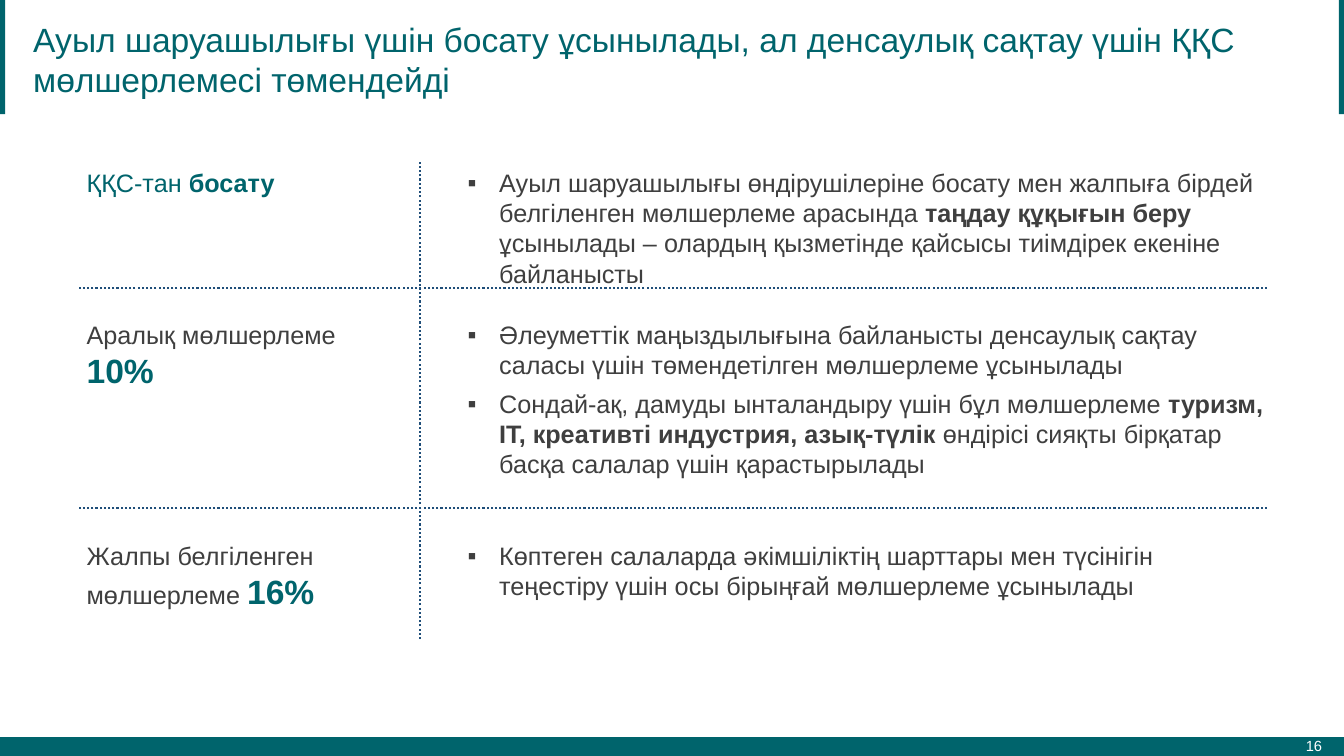
"""Build the slide on proposed VAT exemptions and rates."""
import pptx
import pptx.util
import pptx.dml.color
import pptx.enum.dml
import pptx.enum.shapes
import pptx.enum.text
import pptx.oxml.ns
import lxml.etree

Pt = pptx.util.Pt
qn = pptx.oxml.ns.qn
align = pptx.enum.text.PP_ALIGN
hues = {"teal": "00646C", "gray": "3F3F3F", "navy": "1F4E79", "white": "FFFFFF"}
rgb = {name: pptx.dml.color.RGBColor.from_string(code) for name, code in hues.items()}

deck = pptx.Presentation()
deck.slide_width, deck.slide_height = Pt(960), Pt(540)
slide = deck.slides.add_slide(deck.slide_layouts[6])


def write(paras, box, size=18, hue="gray", side=align.LEFT, mid=False, bullet=False):
    """Add a text box; each paragraph is a list of (text, format) runs."""
    frame = slide.shapes.add_textbox(*map(Pt, box)).text_frame
    frame.word_wrap = True
    if mid:
        frame.vertical_anchor = pptx.enum.text.MSO_ANCHOR.MIDDLE
    for i, runs in enumerate(paras):
        para = frame.add_paragraph() if i else frame.paragraphs[0]
        para.alignment = side
        if bullet:
            para.space_after = Pt(6)
            props = para._p.get_or_add_pPr()
            props.set("marL", str(Pt(22.5)))
            props.set("indent", str(-Pt(22.5)))
            lxml.etree.SubElement(props, qn("a:buFont"), typeface="Arial")
            lxml.etree.SubElement(props, qn("a:buChar"), char="▪")
        for words, form in runs:
            run = para.add_run()
            run.text = words
            font = run.font
            font.name = "Arial"
            font.size = Pt(form.get("size", size))
            font.bold = form.get("bold", False)
            font.color.rgb = rgb[form.get("hue", hue)]


for box in [(0, 526.5, 960, 13.5), (0, -1.5, 3.6, 83), (956.4, -1.5, 3.6, 83)]:
    bar = slide.shapes.add_shape(pptx.enum.shapes.MSO_SHAPE.RECTANGLE, *map(Pt, box))
    bar.shadow.inherit = False
    bar.fill.solid()
    bar.fill.fore_color.rgb = rgb["teal"]
    bar.line.fill.background()

plain, bold = {}, {"bold": True}
rate = {"bold": True, "size": 24, "hue": "teal"}

write([[("16", plain)]], (858, 518.4, 93.5, 28.8), size=10.5, hue="white",
      side=align.RIGHT, mid=True)
write([[("Ауыл шаруашылығы үшін босату ұсынылады, ал денсаулық сақтау үшін ҚҚС "
         "мөлшерлемесі төмендейді", plain)]],
      (16.6, 14.4, 903.6, 55.4), size=24, hue="teal", mid=True)

rows = [
    (116, 29, 94, "teal",
     [[("ҚҚС-тан ", plain), ("босату", bold)]],
     [[("Ауыл шаруашылығы өндірушілеріне босату мен жалпыға бірдей белгіленген "
        "мөлшерлеме арасында ", plain),
       ("таңдау құқығын беру ", bold),
       ("ұсынылады – олардың қызметінде қайсысы тиімдірек екеніне байланысты", plain)]]),
    (224.6, 58, 122, "gray",
     [[("Аралық мөлшерлеме", plain)], [("10%", rate)]],
     [[("Әлеуметтік маңыздылығына байланысты денсаулық сақтау саласы үшін "
        "төмендетілген мөлшерлеме ұсынылады", plain)],
      [("Сондай-ақ, дамуды ынталандыру үшін бұл мөлшерлеме ", plain),
       ("туризм, IT, креативті индустрия, азық-түлік ", bold),
       ("өндірісі сияқты бірқатар басқа салалар үшін қарастырылады", plain)]]),
    (382.3, 58, 51, "gray",
     [[("Жалпы белгіленген", plain)], [("мөлшерлеме ", plain), ("16%", rate)]],
     [[("Көптеген салаларда әкімшіліктің шарттары мен түсінігін теңестіру үшін осы "
        "бірыңғай мөлшерлеме ұсынылады", plain)]]),
]
for top, short, tall, hue, label, notes in rows:
    write(label, (54.8, top, 251.3, short), hue=hue)
    write(notes, (327, top, 584.6, tall), bullet=True)

for ends in [(905, 205.9, 54.8, 205.9), (905, 362.9, 54.8, 362.9), (299.8, 456.5, 299.8, 116)]:
    rule = slide.shapes.add_connector(pptx.enum.shapes.MSO_CONNECTOR.STRAIGHT, *map(Pt, ends))
    rule.line.color.rgb = rgb["navy"]
    rule.line.width = Pt(1.5)
    rule.line.dash_style = pptx.enum.dml.MSO_LINE.ROUND_DOT
    lxml.etree.SubElement(rule._element.spPr, qn("a:effectLst"))

deck.save("out.pptx")
